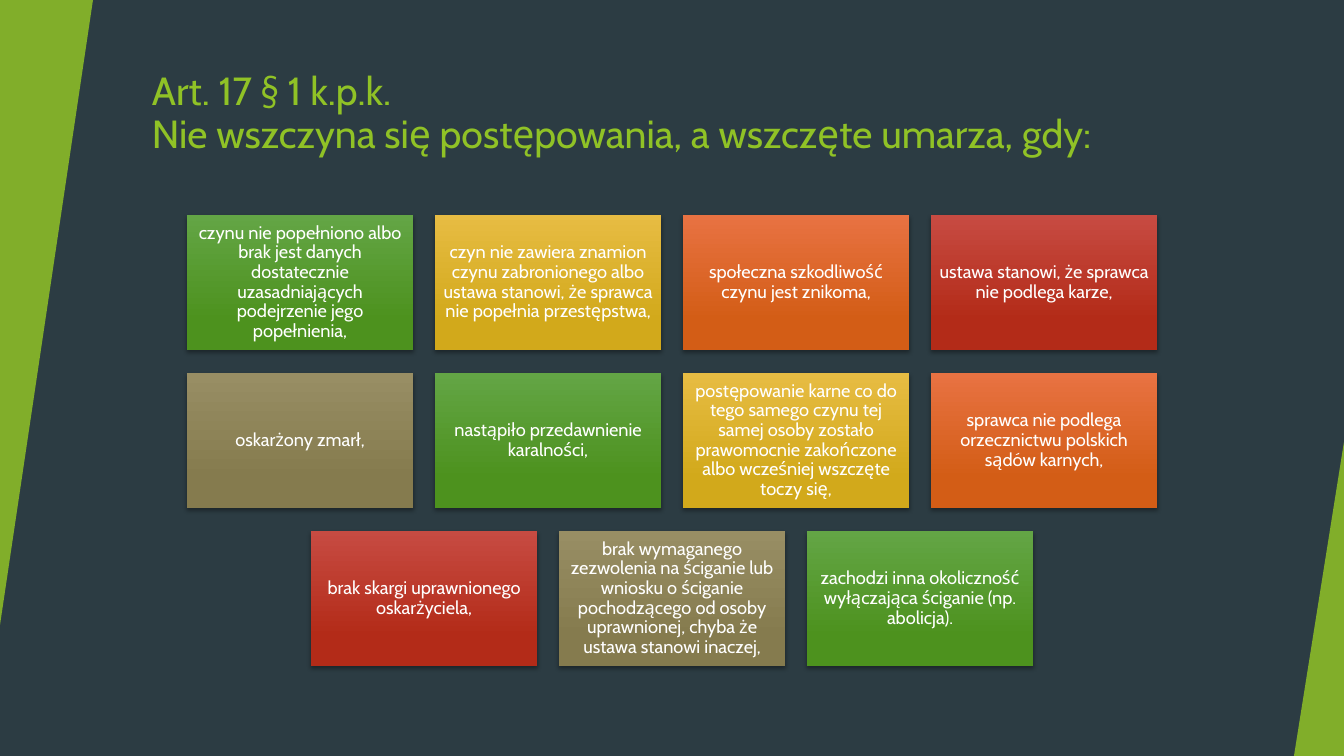
from typing import NamedTuple

from lxml.etree import SubElement
from pptx import Presentation
from pptx.dml.color import RGBColor
from pptx.enum.shapes import MSO_SHAPE
from pptx.enum.text import MSO_ANCHOR, PP_ALIGN
from pptx.oxml import parse_xml
from pptx.oxml.ns import nsdecls, qn
from pptx.util import Emu, Pt

WIDE, HIGH = 1344, 756
CARD_W, CARD_H = 226, 135
STEP_X, STEP_Y = 248, 158
TOP = 215
FONT = "Cabin"
LIME = "90C226"
SHADOW = f"""<a:effectLst {nsdecls('a')}>
<a:outerShdw blurRad="38100" dist="25400" dir="5400000" rotWithShape="0">
<a:srgbClr val="000000"><a:alpha val="35000"/></a:srgbClr>
</a:outerShdw></a:effectLst>"""


class Tone(NamedTuple):
    light: str
    dark: str


class Wedge(NamedTuple):
    left: int
    top: int
    width: int
    height: int
    turn: int


TONES = [
    Tone("63A545", "4D921E"),
    Tone("E7BC43", "D2A91B"),
    Tone("E87242", "D35D16"),
    Tone("C74B42", "B32B18"),
    Tone("988E64", "857B4E"),
]

WEDGES = [Wedge(0, 0, 93, 625, 180), Wedge(1294, 442, 50, 314, 0)]

TITLE = ["Art. 17 § 1 k.p.k.", "Nie wszczyna się postępowania, a wszczęte umarza, gdy:"]

ROWS = [
    [
        "czynu nie popełniono albo brak jest danych dostatecznie uzasadniających podejrzenie jego popełnienia,",
        "czyn nie zawiera znamion czynu zabronionego albo ustawa stanowi, że sprawca nie popełnia przestępstwa,",
        "społeczna szkodliwość czynu jest znikoma,",
        "ustawa stanowi, że sprawca nie podlega karze,",
    ],
    [
        "oskarżony zmarł,",
        "nastąpiło przedawnienie karalności,",
        "postępowanie karne co do tego samego czynu tej samej osoby zostało prawomocnie zakończone "
        "albo wcześniej wszczęte toczy się,",
        "sprawca nie podlega orzecznictwu polskich sądów karnych,",
    ],
    [
        "brak skargi uprawnionego oskarżyciela,",
        "brak wymaganego zezwolenia na ściganie lub wniosku o ściganie pochodzącego od osoby uprawnionej, "
        "chyba że ustawa stanowi inaczej,",
        "zachodzi inna okoliczność wyłączająca ściganie (np. abolicja).",
    ],
]


def px(count: int) -> Emu:
    return Emu(round(count * 914400 / 100.8))


def paint(code: str) -> RGBColor:
    return RGBColor.from_string(code)


def style(para, size: int, code: str) -> None:
    para.line_spacing = 0.9
    para.font.name = FONT
    para.font.size = Pt(size)
    para.font.color.rgb = paint(code)


def add_wedge(slide, wedge: Wedge) -> None:
    shape = slide.shapes.add_shape(
        MSO_SHAPE.ISOSCELES_TRIANGLE,
        px(wedge.left), px(wedge.top), px(wedge.width), px(wedge.height),
    )
    shape.adjustments[0] = 1
    shape.rotation = wedge.turn
    shape.shadow.inherit = False
    shape.line.fill.background()
    shape.fill.solid()
    shape.fill.fore_color.rgb = paint(LIME)
    color = shape.fill._xPr.find(qn("a:solidFill"))[0]
    SubElement(color, qn("a:alpha")).set("val", "85000")


def add_title(slide) -> None:
    box = slide.shapes.add_textbox(px(142), px(67), px(1124), px(121))
    frame = box.text_frame
    frame.word_wrap = True
    para = frame.paragraphs[0]
    style(para, 28, LIME)
    para.add_run().text = TITLE[0]
    para.add_line_break()
    para.add_run().text = TITLE[1]


def add_card(slide, left: int, top: int, tone: Tone, text: str) -> None:
    card = slide.shapes.add_shape(
        MSO_SHAPE.RECTANGLE, px(left), px(top), px(CARD_W), px(CARD_H)
    )
    card.line.fill.background()
    card.fill.gradient()
    card.fill.gradient_angle = 270
    for stop, place, code in zip(card.fill.gradient_stops, (0, 0.78), tone):
        stop.position = place
        stop.color.rgb = paint(code)
    card._element.spPr.append(parse_xml(SHADOW))
    frame = card.text_frame
    frame.word_wrap = True
    frame.vertical_anchor = MSO_ANCHOR.MIDDLE
    frame.margin_left = frame.margin_right = px(5)
    frame.margin_top = frame.margin_bottom = px(5)
    para = frame.paragraphs[0]
    para.text = text
    para.alignment = PP_ALIGN.CENTER
    style(para, 13, "FFFFFF")


def add_cards(slide) -> None:
    count = 0
    for row, texts in enumerate(ROWS):
        span = (len(texts) - 1) * STEP_X + CARD_W
        start = (WIDE - span) // 2
        for col, text in enumerate(texts):
            tone = TONES[count % len(TONES)]
            add_card(slide, start + col * STEP_X, TOP + row * STEP_Y, tone, text)
            count += 1


def main() -> None:
    deck = Presentation()
    deck.slide_width, deck.slide_height = px(WIDE), px(HIGH)
    slide = deck.slides.add_slide(deck.slide_layouts[6])
    slide.background.fill.solid()
    slide.background.fill.fore_color.rgb = paint("2C3C43")
    add_title(slide)
    for wedge in WEDGES:
        add_wedge(slide, wedge)
    add_cards(slide)
    deck.save("out.pptx")


if __name__ == "__main__":
    main()
